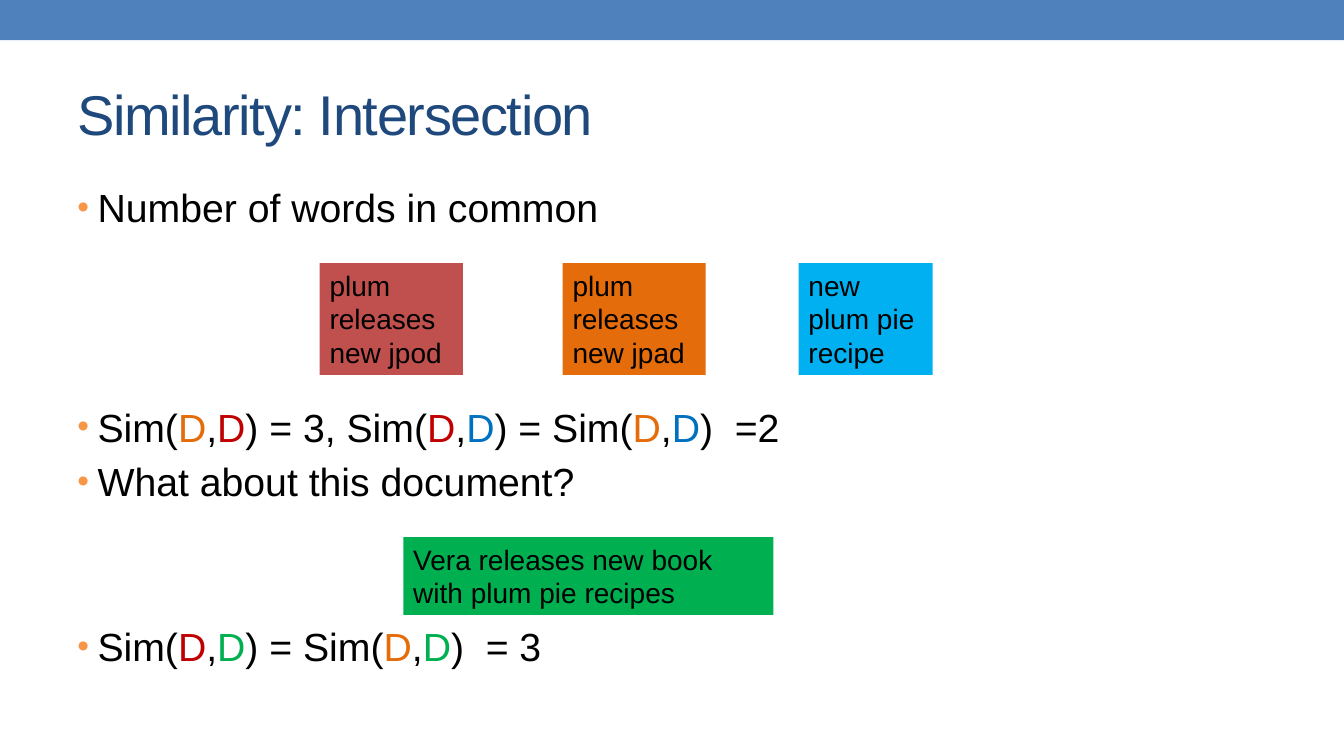
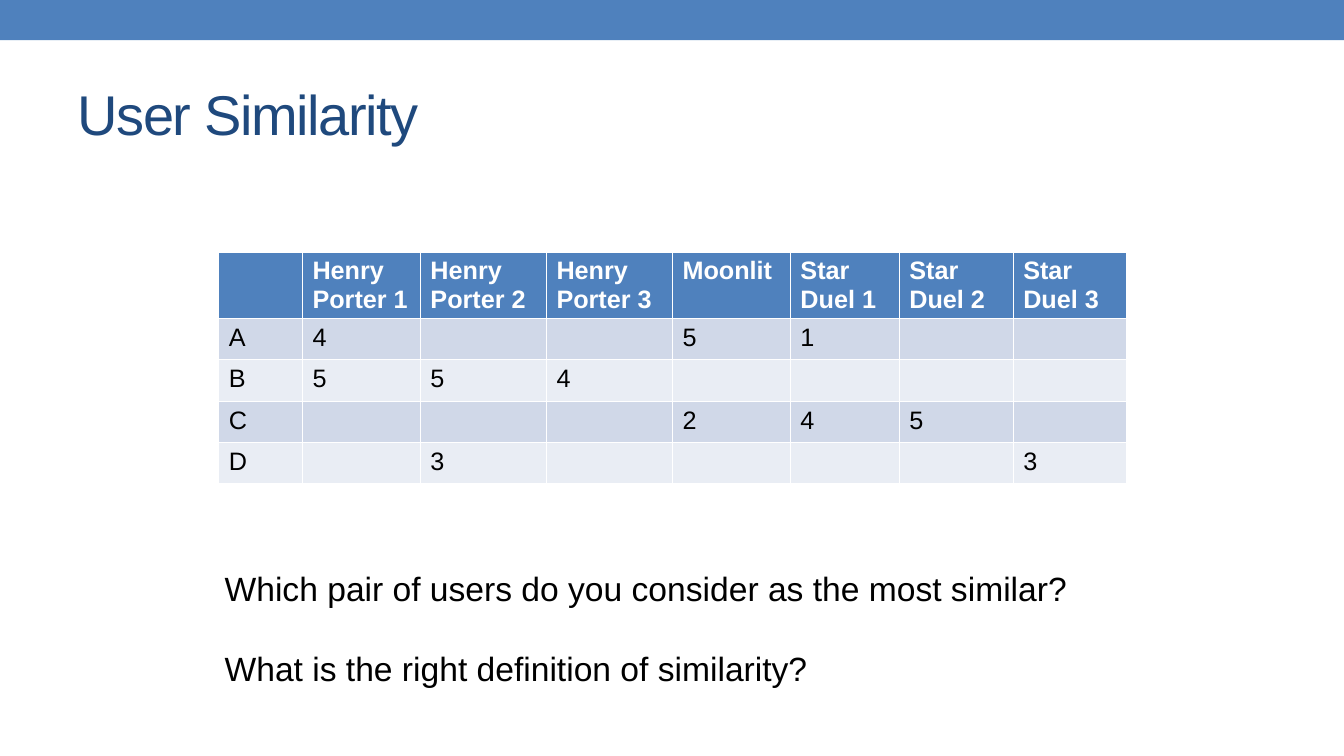
from lxml.etree import SubElement
from pptx import Presentation
from pptx.dml.color import RGBColor
from pptx.enum.shapes import MSO_SHAPE
from pptx.enum.text import MSO_ANCHOR, PP_ALIGN
from pptx.oxml.ns import qn
from pptx.util import Inches, Pt

FONT = "Arial"
INK = {
    "band": "4F81BD", "title": "1F497D", "text": "000000", "white": "FFFFFF",
    "dot": "F79646", "brick": "C0504D", "red": "C00000", "orange": "E46C0A",
    "sky": "00B0F0", "blue": "0070C0", "green": "00B050",
    "odd": "D0D8E8", "even": "E9EDF4",
}


def tint(name):
    return RGBColor.from_string(INK[name])


class Deck:
    def __init__(self):
        self.prs = Presentation()
        self.prs.slide_width = Inches(13.33)
        self.prs.slide_height = Inches(7.5)

    def style(self, para, size, ink="text", bold=False):
        for run in para.runs:
            font = run.font
            font.name, font.size, font.bold = FONT, Pt(size), bold
            font.color.rgb = tint(ink)

    def lead(self, para, size, gap=0):
        para.line_spacing = Pt(1.2 * size)
        para.space_before = Pt(gap)

    def rect(self, spot, fill):
        box = self.slide.shapes.add_shape(
            MSO_SHAPE.RECTANGLE, *map(Inches, spot))
        box.shadow.inherit = False
        box.fill.solid()
        box.fill.fore_color.rgb = tint(fill)
        box.line.fill.background()
        return box

    def start(self, text):
        self.slide = self.prs.slides.add_slide(self.prs.slide_layouts[5])
        self.rect((0, 0, 13.33, 0.4), "band")
        title = self.slide.shapes.title
        title.left, title.top = Inches(0.67), Inches(0.58)
        title.width, title.height = Inches(12), Inches(1.08)
        frame = title.text_frame
        frame.text = text
        frame.vertical_anchor = MSO_ANCHOR.MIDDLE
        para = frame.paragraphs[0]
        para.alignment = PP_ALIGN.LEFT
        self.style(para, 40, "title")
        para.runs[0].font._element.set("spc", "-100")

    def card(self, spot, fill, text):
        frame = self.rect(spot, fill).text_frame
        frame.text = text
        frame.word_wrap = True
        frame.vertical_anchor = MSO_ANCHOR.TOP
        para = frame.paragraphs[0]
        para.alignment = PP_ALIGN.LEFT
        self.style(para, 20)
        self.lead(para, 20)

    def frame(self, spot, lines):
        box = self.slide.shapes.add_textbox(*map(Inches, spot))
        frame = box.text_frame
        frame.text = "\n".join(lines)
        frame.word_wrap = True
        return frame

    def dot(self, para):
        props = para._p.get_or_add_pPr()
        props.set("marL", str(Inches(0.2)))
        props.set("indent", str(-Inches(0.2)))
        color = SubElement(props, qn("a:buClr"))
        SubElement(color, qn("a:srgbClr"), val=INK["dot"])
        SubElement(props, qn("a:buSzPct"), val="85000")
        SubElement(props, qn("a:buFont"), typeface=FONT)
        SubElement(props, qn("a:buChar"), char="•")

    def paint(self, para, inks):
        parts = para.text.split("D")
        para.text = parts[0]
        for ink, part in zip(inks, parts[1:]):
            mark = para.add_run()
            mark.text = "D"
            para.add_run().text = part
        self.style(para, 28)
        for run, ink in zip(para.runs[1::2], inks):
            run.font.color.rgb = tint(ink)

    def points(self, spot, items):
        frame = self.frame(spot, [text for text, skip, inks in items])
        size, gap = 28, 5.6
        pitch = 1.2 * size + gap
        for i, (para, item) in enumerate(zip(frame.paragraphs, items)):
            text, skip, inks = item
            self.lead(para, size, gap + skip * pitch if i else 0)
            self.dot(para)
            self.paint(para, inks)

    def notes(self, spot, lines, size, gap):
        for i, para in enumerate(self.frame(spot, lines).paragraphs):
            self.style(para, size)
            self.lead(para, size, gap if i else 0)

    def table(self, spot, wide, high, rows):
        grid = self.slide.shapes.add_table(
            len(rows), len(wide), *map(Inches, spot)).table
        for col, width in zip(grid.columns, wide):
            col.width = Inches(width)
        for r, (row, height) in enumerate(zip(rows, high)):
            grid.rows[r].height = Inches(height)
            head = r == 0
            fill = "band" if head else "odd" if r % 2 else "even"
            for c, text in enumerate(row):
                cell = grid.cell(r, c)
                cell.fill.solid()
                cell.fill.fore_color.rgb = tint(fill)
                if text:
                    cell.text_frame.text = text
                    self.style(cell.text_frame.paragraphs[0], 18,
                               "white" if head else "text", head)


def main():
    deck = Deck()

    deck.start("Similarity: Intersection")
    deck.points((0.67, 1.77, 12, 5.31), [
        ("Number of words in common", 0, []),
        ("Sim(D,D) = 3, Sim(D,D) = Sim(D,D)  =2", 3,
         ["orange", "red", "red", "blue", "orange", "blue"]),
        ("What about this document?", 0, []),
        ("Sim(D,D) = Sim(D,D)  = 3", 2,
         ["red", "green", "orange", "green"]),
    ])
    for left, width, fill, text in [
        (3.17, 1.42, "brick", "plum releases new jpod"),
        (5.58, 1.42, "orange", "plum releases new jpad"),
        (7.92, 1.33, "sky", "new plum pie recipe"),
    ]:
        deck.card((left, 2.61, width, 1.11), fill, text)
    deck.card((4, 5.33, 3.67, 0.77), "green",
              "Vera releases new book with plum pie recipes")

    deck.start("User Similarity")
    films = ["Henry Porter 1", "Henry Porter 2", "Henry Porter 3", "Moonlit",
             "Star Duel 1", "Star Duel 2", "Star Duel 3"]
    deck.table(
        (2.17, 2.5, 9, 2.29),
        [0.83, 1.17, 1.25, 1.25, 1.17, 1.08, 1.13, 1.12],
        [0.65] + [0.41] * 4,
        [
            ["", *films],
            ["A", "4", "", "", "5", "1", "", ""],
            ["B", "5", "5", "4", "", "", "", ""],
            ["C", "", "", "", "2", "4", "5", ""],
            ["D", "", "3", "", "", "", "", "3"],
        ])
    deck.notes((2.13, 5.58, 8.64, 1.31), [
        "Which pair of users do you consider as the most similar?",
        "What is the right definition of similarity?",
    ], 24, 28.8)

    deck.prs.save("out.pptx")


if __name__ == "__main__":
    main()
